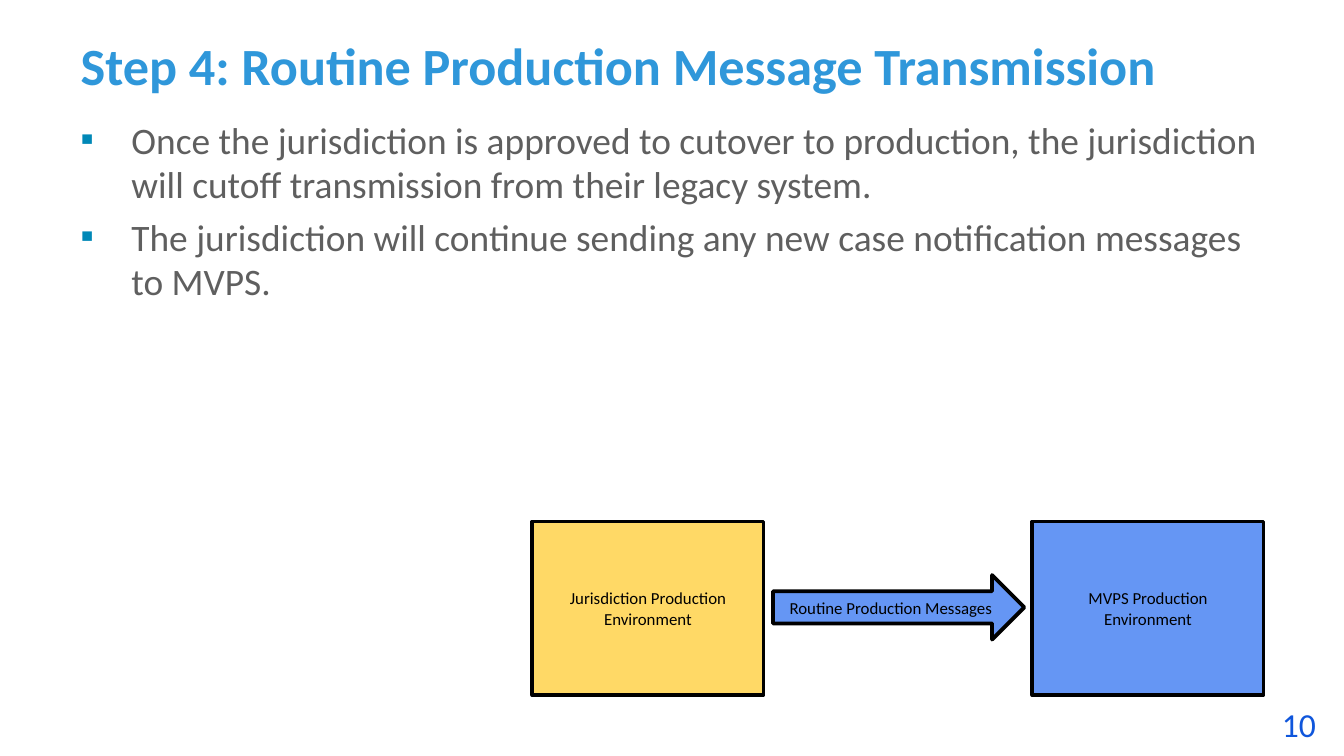
"""Build the slide on routine production message transmission."""
from dataclasses import dataclass
from typing import Any, Optional

import lxml.etree
import pptx
import pptx.dml.color
import pptx.enum.shapes
import pptx.enum.text
import pptx.oxml.ns
import pptx.util

Cm = pptx.util.Cm
Pt = pptx.util.Pt
qn = pptx.oxml.ns.qn
Align = pptx.enum.text.PP_ALIGN
Anchor = pptx.enum.text.MSO_ANCHOR
ShapeKind = pptx.enum.shapes.MSO_SHAPE


@dataclass(frozen=True)
class Theme:
    """Colours and type sizes of the slide."""
    font: str = "Calibri"
    title: str = "2F97DA"
    body: str = "5F5F5F"
    bullet: str = "0088B7"
    number: str = "0F56DC"
    ink: str = "000000"
    yellow: str = "FFD966"
    blue: str = "6596F4"
    title_size: int = 28
    body_size: int = 20
    number_size: int = 18
    label_size: int = 9
    outline: int = 2


@dataclass(frozen=True)
class Area:
    """Position and size in centimetres."""
    left: float
    top: float
    width: float
    height: float

    def lengths(self) -> list[int]:
        """Return the four values as lengths."""
        return [Cm(n) for n in (self.left, self.top, self.width, self.height)]


@dataclass(frozen=True)
class Block:
    """A labelled shape of the message flow."""
    label: str
    kind: Any
    area: Area
    fill: str


THEME = Theme()
TITLE_AREA = Area(1.27, 0.58, 22.86, 1.37)
BODY_AREA = Area(1.27, 2.08, 22.86, 10.39)
NUMBER_AREA = Area(22.71, 13.18, 2.41, 1.02)
BULLETS = (
    "Once the jurisdiction is approved to cutover to production, "
    "the jurisdiction will cutoff transmission from their legacy system.",
    "The jurisdiction will continue sending any new case notification messages to MVPS.",
)
BLOCKS = (
    Block("Jurisdiction Production Environment", ShapeKind.RECTANGLE,
          Area(10.06, 9.86, 4.37, 3.28), THEME.yellow),
    Block("MVPS Production Environment", ShapeKind.RECTANGLE,
          Area(19.51, 9.86, 4.37, 3.28), THEME.blue),
    Block("Routine Production Messages", ShapeKind.RIGHT_ARROW,
          Area(14.61, 10.87, 4.75, 1.22), THEME.blue),
)


def rgb(value: str) -> pptx.dml.color.RGBColor:
    """Turn a hex string into a colour."""
    return pptx.dml.color.RGBColor.from_string(value)


def write(para: Any, text: str, *, size: int, color: str, bold: bool = False,
          align: Any = Align.LEFT, before: float = 0,
          spacing: Optional[float] = None) -> None:
    """Put formatted text in a paragraph."""
    para.alignment = align
    para.space_before = Pt(before)
    if spacing:
        para.line_spacing = Pt(spacing)
    span = para.add_run()
    span.text = text
    span.font.name = THEME.font
    span.font.size = Pt(size)
    span.font.bold = bold
    span.font.color.rgb = rgb(color)


def add_bullet(para: Any) -> None:
    """Give a paragraph a coloured square bullet with a hanging indent."""
    props = para._p.get_or_add_pPr()
    props.set("marL", str(Cm(0.96)))
    props.set("indent", str(Cm(-0.96)))
    tint = lxml.etree.SubElement(props, qn("a:buClr"))
    lxml.etree.SubElement(tint, qn("a:srgbClr"), val=THEME.bullet)
    lxml.etree.SubElement(props, qn("a:buFont"), typeface=THEME.font)
    lxml.etree.SubElement(props, qn("a:buChar"), char="▪")


def prepare(box: Any, area: Area, anchor: Any) -> Any:
    """Place a box and return its wrapped text frame."""
    box.left, box.top, box.width, box.height = area.lengths()
    frame = box.text_frame
    frame.word_wrap = True
    frame.auto_size = pptx.enum.text.MSO_AUTO_SIZE.NONE
    frame.vertical_anchor = anchor
    return frame


def add_block(page: Any, block: Block) -> None:
    """Draw one labelled shape."""
    box = page.shapes.add_shape(block.kind, *block.area.lengths())
    box.shadow.inherit = False
    box.fill.solid()
    box.fill.fore_color.rgb = rgb(block.fill)
    box.line.color.rgb = rgb(THEME.ink)
    box.line.width = Pt(THEME.outline)
    frame = prepare(box, block.area, Anchor.MIDDLE)
    write(frame.paragraphs[0], block.label, size=THEME.label_size,
          color=THEME.ink, align=Align.CENTER)


def main() -> None:
    """Build and save the deck."""
    deck = pptx.Presentation()
    deck.slide_width, deck.slide_height = Cm(25.4), Cm(14.29)
    page = deck.slides.add_slide(deck.slide_layouts[1])

    title = prepare(page.shapes.title, TITLE_AREA, Anchor.BOTTOM)
    write(title.paragraphs[0], "Step 4: Routine Production Message Transmission",
          size=THEME.title_size, color=THEME.title, bold=True, spacing=30)

    body = prepare(page.placeholders[1], BODY_AREA, Anchor.TOP)
    for index, text in enumerate(BULLETS):
        para = body.add_paragraph() if index else body.paragraphs[0]
        add_bullet(para)
        write(para, text, size=THEME.body_size, color=THEME.body,
              before=4 if index else 0)

    for block in BLOCKS:
        add_block(page, block)

    number = prepare(page.shapes.add_textbox(*NUMBER_AREA.lengths()),
                     NUMBER_AREA, Anchor.TOP)
    write(number.paragraphs[0], "10", size=THEME.number_size,
          color=THEME.number, align=Align.RIGHT)
    deck.save("out.pptx")


if __name__ == "__main__":
    main()
